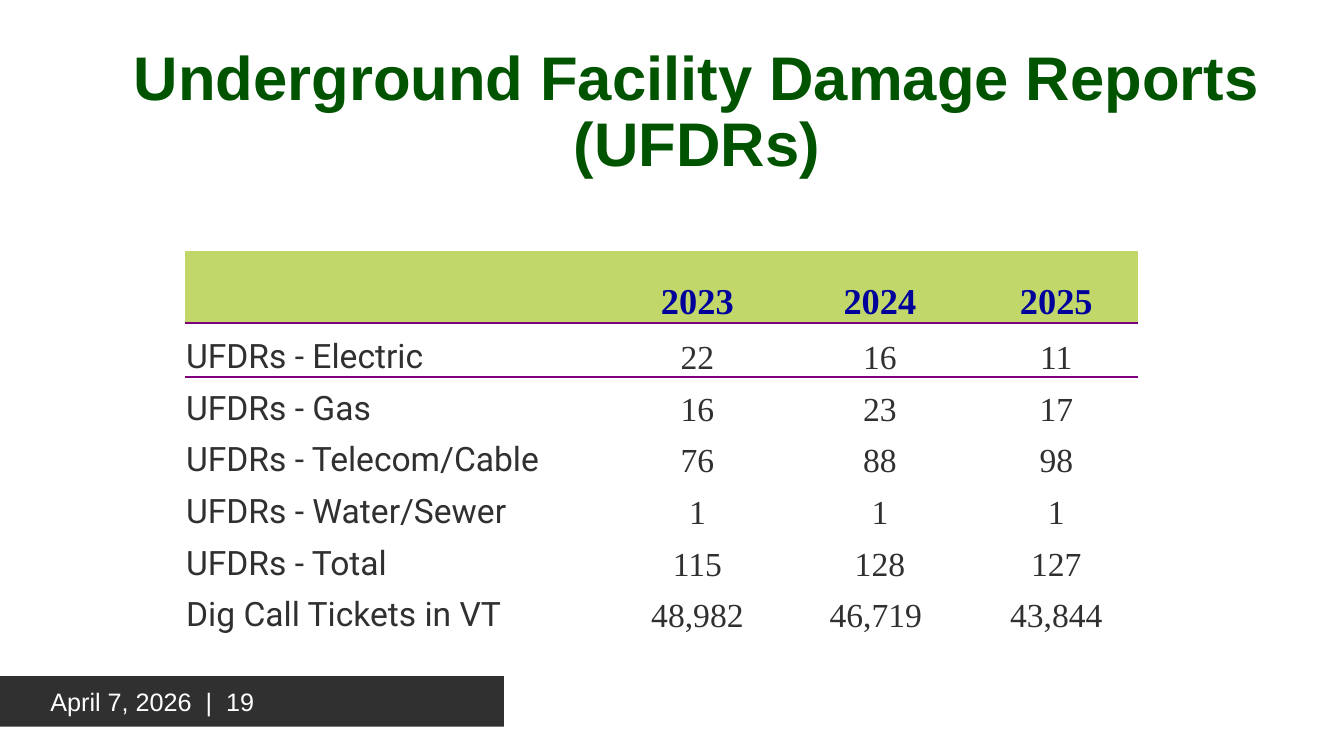
from lxml.etree import SubElement
from pptx import Presentation
from pptx.dml.color import RGBColor
from pptx.enum.shapes import MSO_SHAPE
from pptx.enum.text import MSO_ANCHOR, PP_ALIGN
from pptx.oxml import parse_xml
from pptx.oxml.ns import nsdecls, qn
from pptx.util import Cm, Pt

COLORS = {
    "title": "005400",
    "header": "C1D76A",
    "year": "00009A",
    "rule": "7E007E",
    "dark": "303030",
    "white": "FFFFFF",
}
NO_GRID_STYLE = "{2D5ABB26-0587-4C30-8999-92F81FD0307C}"
COLUMN_WIDTHS = [10.69, 4.45, 4.75, 4.14]
ROW_HEIGHTS = [1.8, 1.37] + [1.3] * 5
REPORTS = [
    ["", "2023", "2024", "2025"],
    ["UFDRs - Electric", "22", "16", "11"],
    ["UFDRs - Gas", "16", "23", "17"],
    ["UFDRs - Telecom/Cable", "76", "88", "98"],
    ["UFDRs - Water/Sewer", "1", "1", "1"],
    ["UFDRs - Total", "115", "128", "127"],
    ["Dig Call Tickets in VT", "48,982", "46,719 ", "43,844"],
]


def rgb(name):
    return RGBColor.from_string(COLORS[name])


def write(frame, text, font, size, color, align, bold=False):
    frame.text = text
    paragraph = frame.paragraphs[0]
    paragraph.alignment = align
    for run in paragraph.runs:
        run.font.name = font
        run.font.size = Pt(size)
        run.font.bold = bold
        run.font.color.rgb = rgb(color)
    return paragraph


def set_margins(target, left, top, right, bottom):
    target.margin_left, target.margin_top = Cm(left), Cm(top)
    target.margin_right, target.margin_bottom = Cm(right), Cm(bottom)


def add_footer(slide, left, top, width, height):
    footer = slide.shapes.add_shape(
        MSO_SHAPE.RECTANGLE, Cm(left), Cm(top), Cm(width), Cm(height))
    footer.shadow.inherit = False
    footer.fill.solid()
    footer.fill.fore_color.rgb = rgb("dark")
    footer.line.fill.background()
    frame = footer.text_frame
    frame.vertical_anchor = MSO_ANCHOR.MIDDLE
    set_margins(frame, 1.27, 0.13, 0.25, 0.13)
    write(frame, "April 7, 2026  |  19", "Arial", 18, "white", PP_ALIGN.LEFT)


def add_title(slide, left, top, width, height):
    title = slide.shapes.add_textbox(Cm(left), Cm(top), Cm(width), Cm(height))
    frame = title.text_frame
    frame.word_wrap = True
    frame.vertical_anchor = MSO_ANCHOR.MIDDLE
    set_margins(frame, 1.27, 0, 0, 0)
    heading = write(frame, "Underground Facility Damage Reports (UFDRs)",
                    "Arial", 44, "title", PP_ALIGN.CENTER, bold=True)
    heading.line_spacing = 0.9


def add_rule(cell, side):
    rule = parse_xml(f'<a:{side} {nsdecls("a")} w="{Pt(1.5)}"/>')
    fill = SubElement(rule, qn("a:solidFill"))
    SubElement(fill, qn("a:srgbClr")).set("val", COLORS["rule"])
    cell._tc.get_or_add_tcPr().insert(0, rule)


def fill_cell(cell, text, row, column):
    cell.vertical_anchor = MSO_ANCHOR.BOTTOM
    set_margins(cell, 0.03, 0.03, 0.03, 0)
    align = PP_ALIGN.CENTER if column else PP_ALIGN.LEFT
    font = "Times New Roman" if column else "Roboto"
    if row == 0:
        cell.fill.solid()
        cell.fill.fore_color.rgb = rgb("header")
        write(cell.text_frame, text, font, 26, "year", align, bold=True)
        add_rule(cell, "lnB")
    else:
        cell.fill.background()
        write(cell.text_frame, text, font, 24, "dark", align)
    if row == 1:
        add_rule(cell, "lnT")


def add_reports(slide, left, top, width, height):
    reports = slide.shapes.add_table(
        len(REPORTS), len(COLUMN_WIDTHS),
        Cm(left), Cm(top), Cm(width), Cm(height)).table
    reports.horz_banding = False
    reports._tbl.tblPr.find(qn("a:tableStyleId")).text = NO_GRID_STYLE
    for column, share in zip(reports.columns, COLUMN_WIDTHS):
        column.width = Cm(width * share / sum(COLUMN_WIDTHS))
    for row, share in zip(reports.rows, ROW_HEIGHTS):
        row.height = Cm(height * share / sum(ROW_HEIGHTS))
    for row, values in enumerate(REPORTS):
        for column, text in enumerate(values):
            fill_cell(reports.cell(row, column), text, row, column)


def main():
    presentation = Presentation()
    presentation.slide_width, presentation.slide_height = Cm(33.87), Cm(19.05)
    slide = presentation.slides.add_slide(presentation.slide_layouts[6])
    add_footer(slide, 0, 17.04, 12.7, 1.27)
    add_title(slide, 0, 0, 33.87, 5.72)
    add_reports(slide, 4.66, 6.33, sum(COLUMN_WIDTHS), sum(ROW_HEIGHTS))
    presentation.save("out.pptx")


if __name__ == "__main__":
    main()
